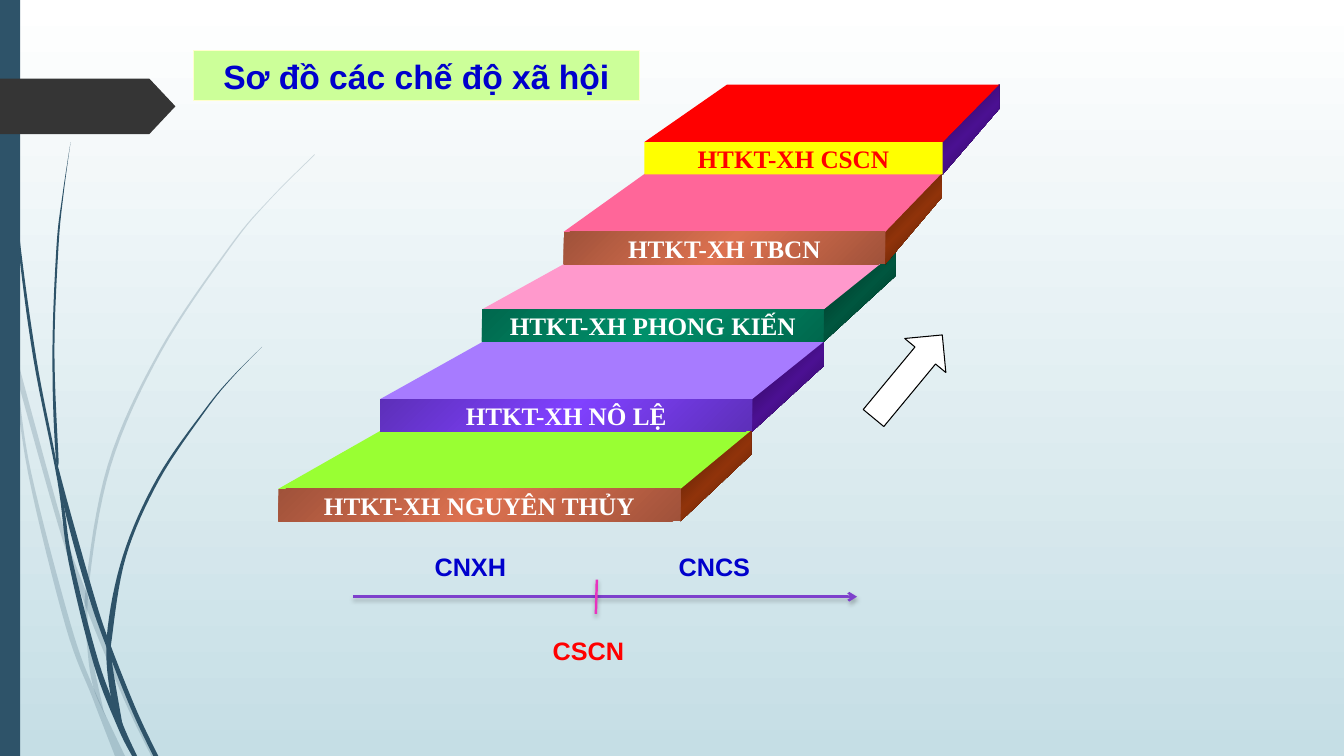
from copy import deepcopy
from dataclasses import dataclass
from itertools import pairwise

from lxml import etree
from pptx import Presentation
from pptx.dml.color import RGBColor
from pptx.enum.shapes import MSO_CONNECTOR, MSO_SHAPE
from pptx.enum.text import MSO_ANCHOR, MSO_AUTO_SIZE, PP_ALIGN
from pptx.oxml.ns import qn
from pptx.util import Pt

RECTANGLE, TAG = MSO_SHAPE.RECTANGLE, MSO_SHAPE.PENTAGON
ARROW, STRAIGHT = MSO_SHAPE.RIGHT_ARROW, MSO_CONNECTOR.STRAIGHT
CENTER, MIDDLE, TOP = PP_ALIGN.CENTER, MSO_ANCHOR.MIDDLE, MSO_ANCHOR.TOP
NO_FIT = MSO_AUTO_SIZE.NONE
PX = 9144  # 100 px to the inch
WIDTH, HEIGHT = 1333, 750
FRONT_HEIGHT, SIDE_DROP = 32, 24
TEAL, BLUE, RED, WHITE = "2E5369", "0000CC", "FF0000", "FFFFFF"

Point = tuple[float, float]


@dataclass
class Wisp:
    alpha: int  # percent
    near: list[Point]
    far: list[Point]


@dataclass
class Step:
    label: str
    left: int
    right: int
    top: int
    back_left: int
    back_right: int
    back_top: int
    front: list[str]
    lid: str
    side: list[str]
    ink: str = WHITE


@dataclass
class Label:
    text: str
    left: int
    top: int
    ink: str


@dataclass
class Rule:
    start: Point
    end: Point
    ink: str
    arrow: bool


BROWN, BROWN_SIDE = ["A0523A", "DC7150", "A0523A"], ["431805", "90330A", "431805"]
VIOLET, VIOLET_SIDE = ["5D2FB9", "8041FF", "5D2FB9"], ["230744", "4B1092", "230744"]
GREEN, GREEN_SIDE = ["00684D", "00906A", "00684D"], ["00281D", "00563F", "00281D"]

STEPS = [
    Step("HTKT-XH NGUYÊN THỦY", 276, 675, 485, 378, 745, 427, BROWN, "99FF33", BROWN_SIDE),
    Step("HTKT-XH NÔ LỆ", 377, 746, 396, 479, 817, 339, VIOLET, "A77BFF", VIOLET_SIDE),
    Step("HTKT-XH PHONG KIẾN", 478, 817, 307, 581, 888, 250, GREEN, "FF99CC", GREEN_SIDE),
    Step("HTKT-XH TBCN", 559, 878, 230, 640, 934, 172, BROWN, "FF6699", BROWN_SIDE),
    Step("HTKT-XH CSCN", 639, 935, 141, 721, 991, 84, ["FFFF00"], RED, VIOLET_SIDE, RED),
]
LABELS = [Label("CNXH", 383, 542, BLUE), Label("CNCS", 625, 542, BLUE),
          Label("CSCN", 500, 625, RED)]
RULES = [Rule((350, 592), (850, 592), "7E40CC", True),
         Rule((592, 575), (591, 609), "E833BF", False)]
WISPS = [
    Wisp(20, [(0, 299), (11, 350), (28, 470), (65, 621), (92, 693), (114, 750)],
         [(0, 282), (9, 322), (17, 376), (31, 469), (70, 619), (93, 683), (124, 750)]),
    Wisp(20, [(17, 376), (58, 522), (84, 599), (123, 694), (150, 750)],
         [(14, 345), (62, 520), (85, 586), (127, 692), (155, 750)]),
    Wisp(20, [(312, 153), (268, 197), (228, 244), (158, 348), (107, 461), (85, 584),
              (87, 646), (93, 683), (105, 711)],
         [(312, 154), (268, 198), (229, 245), (160, 349), (110, 462), (88, 584),
          (91, 646), (103, 706)]),
    Wisp(100, [(3, 0), (7, 110), (17, 233), (33, 355), (57, 477), (68, 557), (93, 659),
               (117, 722), (131, 750)],
         [(4, 0), (8, 109), (19, 232), (36, 355), (55, 453), (64, 505), (72, 556),
          (98, 657), (122, 719), (136, 750)]),
    Wisp(100, [(70, 141), (62, 193), (56, 245), (52, 349), (55, 449), (64, 505),
               (88, 592), (111, 656), (132, 708), (152, 750)],
         [(70, 141), (63, 193), (58, 245), (54, 349), (58, 453), (60, 472), (93, 590),
          (110, 641), (136, 706), (157, 750)]),
    Wisp(100, [(260, 344), (231, 373), (204, 405), (156, 474), (122, 551), (106, 631),
               (110, 691), (122, 719)],
         [(260, 344), (231, 374), (205, 406), (158, 476), (125, 552), (111, 633),
          (111, 656), (121, 716)]),
]


def emu(length: float) -> int:
    return round(length * PX)


def rgb(color: str) -> RGBColor:
    return RGBColor.from_string(color)


def paint(fill, holder, colors: list[str], angle: int = 45) -> None:
    """Fill with one colour, or with an even gradient of several."""
    if len(colors) == 1:
        fill.solid()
        fill.fore_color.rgb = rgb(colors[0])
        return
    fill.gradient()
    fill.gradient_angle = 360 - angle
    stop_list = holder.find(".//" + qn("a:gsLst"))
    for _ in colors[2:]:
        stop_list.append(deepcopy(stop_list[0]))
    for index, (stop, color) in enumerate(zip(fill.gradient_stops, colors)):
        stop.color.rgb = rgb(color)
        stop.position = index / (len(colors) - 1)


def finish(shape, colors: list[str], line: str = ""):
    shape.shadow.inherit = False
    paint(shape.fill, shape._element, colors)
    if line:
        shape.line.color.rgb = rgb(line)
        shape.line.width = Pt(0.75)
    else:
        shape.line.fill.background()
    return shape


def add_box(page, kind, left: int, top: int, width: int, height: int,
            colors: list[str], line: str = ""):
    box = page.shapes.add_shape(kind, emu(left), emu(top), emu(width), emu(height))
    return finish(box, colors, line)


def add_outline(page, points: list[Point], colors: list[str]):
    corners = [(emu(x), emu(y)) for x, y in points]
    builder = page.shapes.build_freeform(*corners[0], scale=1.0)
    builder.add_line_segments(corners[1:], close=True)
    return finish(builder.convert_to_shape(), colors)


def write(box, text: str, *, size: int, font: str, ink: str, wrap: bool = True,
          anchor=MIDDLE) -> None:
    frame = box.text_frame
    frame.word_wrap, frame.auto_size, frame.vertical_anchor = wrap, NO_FIT, anchor
    para = frame.paragraphs[0]
    para.alignment = CENTER
    span = para.add_run()
    span.text = text
    span.font.size, span.font.name, span.font.bold = Pt(size), font, True
    span.font.color.rgb = rgb(ink)


def smooth(knots: list[Point], parts: int = 8) -> list[Point]:
    """Points of a Catmull-Rom curve through the knots."""
    padded = [knots[0], *knots, knots[-1]]
    curve = [knots[0]]
    for index, (b, c) in enumerate(pairwise(knots)):
        a, d = padded[index], padded[index + 3]
        for t in (part / parts for part in range(1, parts + 1)):
            curve.append(tuple(
                (2 * q + (r - p) * t + (2 * p - 5 * q + 4 * r - s) * t**2
                 + (3 * q - p - 3 * r + s) * t**3) / 2
                for p, q, r, s in zip(a, b, c, d)))
    return curve


def draw_wisp(page, wisp: Wisp) -> None:
    shape = add_outline(page, smooth(wisp.near) + smooth(wisp.far)[::-1], [TEAL])
    if wisp.alpha < 100:
        color = shape._element.spPr.find(qn("a:solidFill"))[0]
        etree.SubElement(color, qn("a:alpha"), val=str(wisp.alpha * 1000))


def draw_step(page, step: Step) -> None:
    near, far = (step.right, step.top), (step.back_right, step.back_top)
    add_outline(page, [far, (far[0], far[1] + SIDE_DROP),
                       (near[0], near[1] + FRONT_HEIGHT), near], step.side)
    add_outline(page, [near, (step.left, step.top), (step.back_left, step.back_top), far],
                [step.lid])
    front = add_box(page, RECTANGLE, step.left, step.top, step.right - step.left,
                    FRONT_HEIGHT, step.front)
    write(front, step.label, size=18, font="Times New Roman", ink=step.ink, wrap=False)


def draw_rule(page, rule: Rule) -> None:
    line = page.shapes.add_connector(STRAIGHT, *map(emu, rule.start + rule.end))
    line.line.color.rgb = rgb(rule.ink)
    line.line.width = Pt(1.75)
    properties = line._element.spPr
    if rule.arrow:
        etree.SubElement(properties.find(qn("a:ln")), qn("a:tailEnd"), type="arrow")
    effects = etree.SubElement(properties, qn("a:effectLst"))
    shadow = etree.SubElement(effects, qn("a:outerShdw"), blurRad=str(Pt(3)),
                              dist=str(Pt(2)), dir="5400000", rotWithShape="0")
    color = etree.SubElement(shadow, qn("a:srgbClr"), val="000000")
    etree.SubElement(color, qn("a:alpha"), val="25000")


def main() -> None:
    deck = Presentation()
    deck.slide_width, deck.slide_height = emu(WIDTH), emu(HEIGHT)
    page = deck.slides.add_slide(deck.slide_layouts[5])

    # Backdrop
    paint(page.background.fill, page._element, [WHITE, "C5DEE5"], angle=90)
    for wisp in WISPS:
        draw_wisp(page, wisp)
    add_box(page, RECTANGLE, 0, 0, 20, HEIGHT, [TEAL])
    tag = add_box(page, TAG, 0, 78, 174, 55, ["353535"])
    tag.adjustments[0] = 0.47

    # Title
    title = page.shapes.title
    title.left, title.top, title.width, title.height = map(emu, (192, 50, 442, 50))
    finish(title, ["CCFF99"], "FFFFCC")
    write(title, "Sơ đồ các chế độ xã hội", size=24, font="Arial", ink=BLUE)

    # Timeline
    for rule in RULES:
        draw_rule(page, rule)
    for label in LABELS:
        box = page.shapes.add_textbox(*map(emu, (label.left, label.top, 167, 40)))
        write(box, label.text, size=18, font="Arial", ink=label.ink, anchor=TOP)

    # Staircase, lowest step first
    for step in STEPS:
        draw_step(page, step)
    arrow = add_box(page, ARROW, 847, 347, 107, 53, [WHITE], "000000")
    arrow.rotation = 309.6

    deck.save("out.pptx")


if __name__ == "__main__":
    main()
